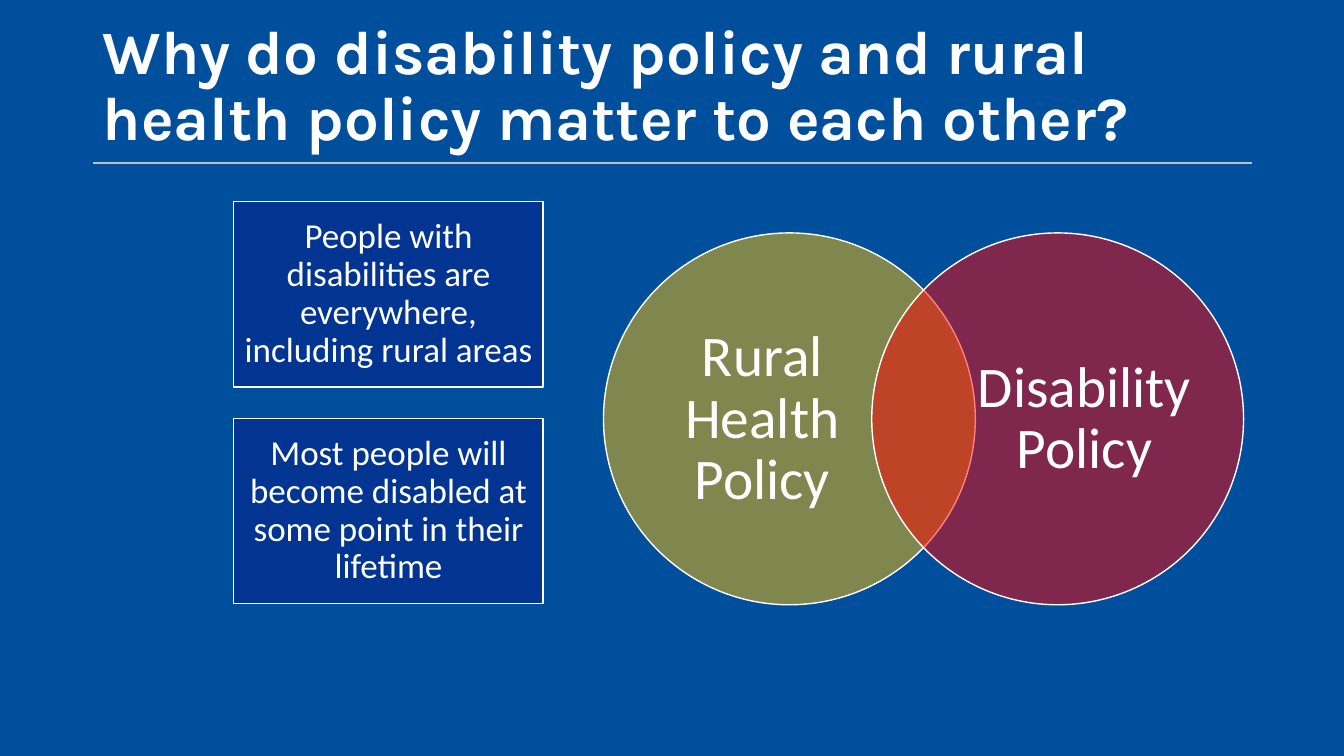
"""Build a slide on how disability policy and rural health policy overlap."""
from dataclasses import dataclass

from lxml import etree
from pptx import Presentation
from pptx.dml.color import RGBColor
from pptx.enum.shapes import MSO_CONNECTOR, MSO_SHAPE
from pptx.enum.text import MSO_ANCHOR, MSO_AUTO_SIZE, PP_ALIGN
from pptx.oxml.ns import qn
from pptx.util import Cm, Pt

STRAIGHT = MSO_CONNECTOR.STRAIGHT
RECTANGLE, OVAL = MSO_SHAPE.RECTANGLE, MSO_SHAPE.OVAL
MIDDLE, BOTTOM = MSO_ANCHOR.MIDDLE, MSO_ANCHOR.BOTTOM
LEFT, CENTER = PP_ALIGN.LEFT, PP_ALIGN.CENTER
NO_FIT = MSO_AUTO_SIZE.NONE


@dataclass(frozen=True)
class Theme:
    background: RGBColor = RGBColor(0x00, 0x4F, 0x9D)
    fact: RGBColor = RGBColor(0x01, 0x35, 0x91)
    rural: RGBColor = RGBColor(0xFF, 0xC0, 0x00)
    disability: RGBColor = RGBColor(0xFF, 0x00, 0x00)
    rule: RGBColor = RGBColor(0xBF, 0xBF, 0xBF)
    white: RGBColor = RGBColor(0xFF, 0xFF, 0xFF)
    title_font: str = "Karla"
    body_font: str = "Calibri"
    title_size: Pt = Pt(44)
    fact_size: Pt = Pt(25)
    circle_size: Pt = Pt(41)
    outline: Pt = Pt(1)


theme = Theme()


def write(frame, text, font, size, inset, anchor=MIDDLE, align=CENTER, bold=False):
    frame.word_wrap = True
    frame.auto_size = NO_FIT
    frame.vertical_anchor = anchor
    frame.margin_left = frame.margin_right = inset
    frame.margin_top = frame.margin_bottom = inset
    paragraph = frame.paragraphs[0]
    paragraph.alignment = align
    paragraph.line_spacing = 0.9
    run = paragraph.add_run()
    run.text = text
    run.font.name = font
    run.font.size = size
    run.font.bold = bold
    run.font.color.rgb = theme.white


def outlined(kind, left, top, width, height, color):
    shape = slide.shapes.add_shape(kind, left, top, width, height)
    shape.shadow.inherit = False
    shape.fill.solid()
    shape.fill.fore_color.rgb = color
    shape.line.color.rgb = theme.white
    shape.line.width = theme.outline
    return shape


deck = Presentation()
deck.slide_width, deck.slide_height = Cm(33.87), Cm(19.05)
slide = deck.slides.add_slide(deck.slide_layouts[5])
slide.background.fill.solid()
slide.background.fill.fore_color.rgb = theme.background

rule = slide.shapes.add_connector(STRAIGHT, Cm(2.34), Cm(4.11), Cm(31.55), Cm(4.11))
rule.line.color.rgb = theme.rule
rule.line.width = theme.outline
etree.SubElement(rule.element.spPr, qn("a:effectLst"))

title = slide.shapes.title
title.left, title.top, title.width, title.height = Cm(2.34), Cm(1.6), Cm(28.37), Cm(2.41)
write(title.text_frame,
      "Why do disability policy and rural health policy matter to each other?",
      theme.title_font, theme.title_size, Cm(0.25), BOTTOM, LEFT, True)
title.text_frame.margin_bottom = Cm(0.13)

facts = ["People with disabilities are everywhere, including rural areas",
         "Most people will become disabled at some point in their lifetime"]
for row, fact in enumerate(facts):
    fact_box = outlined(RECTANGLE, Cm(5.89), Cm(5.08 + 5.46 * row), Cm(7.8), Cm(4.67),
                        theme.fact)
    write(fact_box.text_frame, fact, theme.body_font, theme.fact_size, Cm(0.25))

diameter, label_width, label_margin = 9.37, 5.41, 1.3
policies = [("Rural Health Policy", theme.rural, label_margin),
            ("Disability Policy", theme.disability, diameter - label_width - label_margin)]
for column, (policy, color, label_offset) in enumerate(policies):
    circle_left = 15.21 + 6.76 * column
    circle = outlined(OVAL, Cm(circle_left), Cm(5.87), Cm(diameter), Cm(diameter), color)
    fill_color = circle.element.spPr.find(qn("a:solidFill"))[0]
    etree.SubElement(fill_color, qn("a:alpha"), val="50000")
    label = slide.shapes.add_textbox(Cm(circle_left + label_offset), Cm(6.99),
                                     Cm(label_width), Cm(7.16))
    write(label.text_frame, policy, theme.body_font, theme.circle_size, Cm(0))

deck.save("out.pptx")
